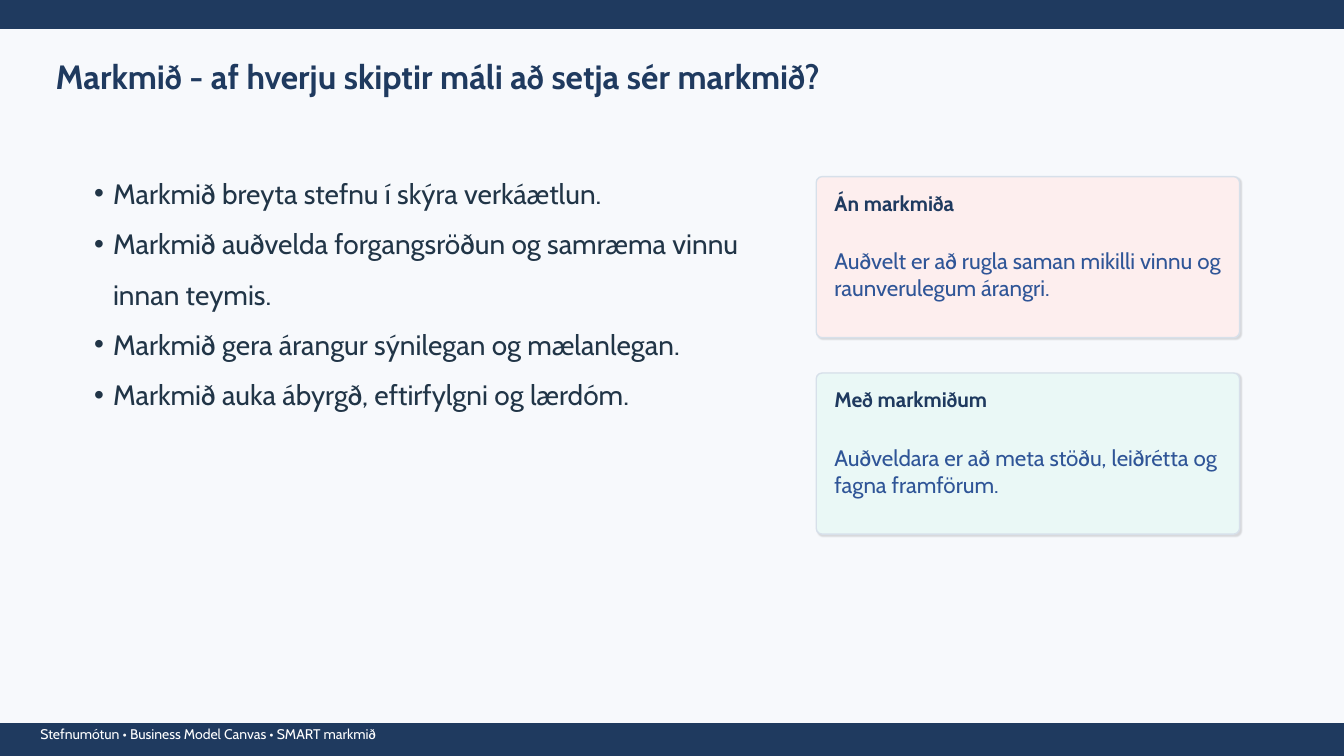
from lxml.etree import SubElement
from pptx import Presentation
from pptx.dml.color import RGBColor
from pptx.enum.shapes import MSO_SHAPE as Preset
from pptx.enum.text import MSO_ANCHOR as Anchor, MSO_AUTO_SIZE as AutoSize, PP_ALIGN as Align
from pptx.oxml.ns import qn
from pptx.util import Cm, Pt

FONT = "Cabin"
COLORS = {
    "navy": "1F3A5F",
    "blue": "2F5597",
    "ink": "213547",
    "white": "FFFFFF",
    "background": "F7F9FC",
    "border": "D7E0EA",
    "rose": "FDEEEE",
    "mint": "EAF8F6",
    "shadow": "000000",
}
TITLE = "Markmið - af hverju skiptir máli að setja sér markmið?"
FOOTER = "Stefnumótun • Business Model Canvas • SMART markmið"
REASONS = [
    "Markmið breyta stefnu í skýra verkáætlun.",
    "Markmið auðvelda forgangsröðun og samræma vinnu innan teymis.",
    "Markmið gera árangur sýnilegan og mælanlegan.",
    "Markmið auka ábyrgð, eftirfylgni og lærdóm.",
]
CARDS = [
    ("Án markmiða", "Auðvelt er að rugla saman mikilli vinnu og raunverulegum árangri.", "rose"),
    ("Með markmiðum", "Auðveldara er að meta stöðu, leiðrétta og fagna framförum.", "mint"),
]
CARD_LEFT, CARD_TOP, CARD_STEP = 20.57, 4.45, 4.95
CARD_WIDTH, CARD_HEIGHT, CARD_PAD = 10.67, 4.06, 0.46


def color(name):
    return RGBColor.from_string(COLORS[name])


def fill_text(holder, lines, size, tint, bold=False, anchor=Anchor.MIDDLE, inset=0):
    """Write the lines into a text shape and format every run."""
    frame = holder.text_frame
    frame.text = "\n".join(lines)
    frame.word_wrap = True
    frame.auto_size = AutoSize.NONE
    frame.vertical_anchor = anchor
    frame.margin_left = frame.margin_right = Cm(inset)
    frame.margin_top = frame.margin_bottom = Cm(inset)
    for paragraph in frame.paragraphs:
        paragraph.alignment = Align.LEFT
        for run in paragraph.runs:
            run.font.name = FONT
            run.font.size = Pt(size)
            run.font.bold = bold
            run.font.color.rgb = color(tint)
    return frame


def add_label(slide, box, text, size, tint, bold=False):
    label = slide.shapes.add_textbox(*map(Cm, box))
    fill_text(label, [text], size, tint, bold)


def add_panel(slide, preset, box, fill, line):
    panel = slide.shapes.add_shape(preset, *map(Cm, box))
    panel.fill.solid()
    panel.fill.fore_color.rgb = color(fill)
    panel.line.color.rgb = color(line)
    panel.line.width = Pt(1)
    panel.shadow.inherit = False
    return panel


def add_soft_shadow(panel):
    effects = panel._element.spPr.find(qn("a:effectLst"))
    shadow = SubElement(effects, qn("a:outerShdw"), blurRad=str(Pt(1)), dist=str(Pt(1)),
                        dir=str(45 * 60000), algn="tl", rotWithShape="0")
    tint = SubElement(shadow, qn("a:srgbClr"), val=COLORS["shadow"])
    SubElement(tint, qn("a:alpha"), val="12000")


def add_title(slide):
    title = slide.shapes.title
    title.left, title.top, title.width, title.height = map(Cm, (1.4, 1.27, 22.35, 1.27))
    fill_text(title, [TITLE], 24, "navy", bold=True)


def add_bullets(slide, box, lines):
    bullets = slide.shapes.add_textbox(*map(Cm, box))
    frame = fill_text(bullets, lines, 20, "ink", anchor=Anchor.TOP, inset=0.08)
    for paragraph in frame.paragraphs:
        properties = paragraph._p.get_or_add_pPr()
        properties.set("marL", str(Cm(0.48)))
        properties.set("indent", str(-Cm(0.48)))
        SubElement(properties, qn("a:buFont"), typeface="Arial")
        SubElement(properties, qn("a:buChar"), char="•")
        paragraph.line_spacing = 1.5


def add_card(slide, top, heading, message, fill):
    card = add_panel(slide, Preset.ROUNDED_RECTANGLE,
                     (CARD_LEFT, top, CARD_WIDTH, CARD_HEIGHT), fill, "border")
    card.adjustments[0] = 0.037
    add_soft_shadow(card)
    left, width = CARD_LEFT + CARD_PAD, CARD_WIDTH - 2 * CARD_PAD
    add_label(slide, (left, top + 0.36, width, 0.61), heading, 15, "navy", bold=True)
    add_label(slide, (left, top + 1.14, width, 2.64), message, 16, "blue")


def main():
    deck = Presentation()
    deck.slide_width, deck.slide_height = Cm(33.87), Cm(19.05)
    slide = deck.slides.add_slide(deck.slide_layouts[5])
    slide.background.fill.solid()
    slide.background.fill.fore_color.rgb = color("background")

    # Top and bottom bands with the footer
    for top, height in ((0, 0.71), (18.24, 0.81)):
        add_panel(slide, Preset.RECTANGLE, (0, top, 33.87, height), "navy", "navy")
    add_label(slide, (1.02, 18.29, 21.59, 0.41), FOOTER, 10, "white")

    # Title and reasons
    add_title(slide)
    add_bullets(slide, (2.29, 3.94, 17.27, 11.43), REASONS)

    # Cards comparing work without and with goals
    for index, (heading, message, fill) in enumerate(CARDS):
        add_card(slide, CARD_TOP + index * CARD_STEP, heading, message, fill)

    deck.save("out.pptx")


if __name__ == "__main__":
    main()
